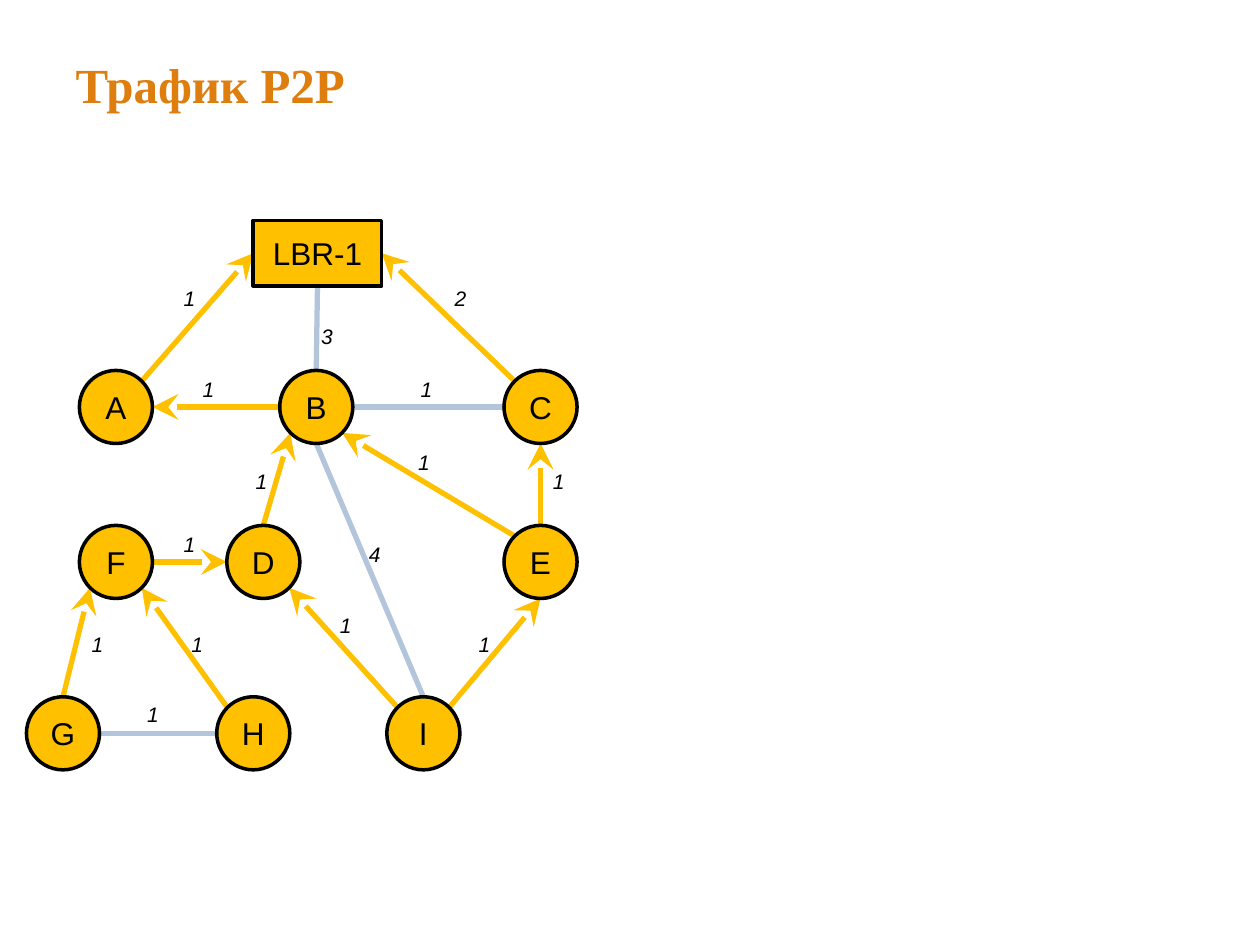
from lxml.etree import SubElement
from pptx import Presentation
from pptx.dml.color import RGBColor
from pptx.enum.shapes import MSO_CONNECTOR, MSO_SHAPE
from pptx.enum.text import MSO_ANCHOR, PP_ALIGN
from pptx.oxml import parse_xml
from pptx.oxml.ns import nsdecls, qn
from pptx.util import Inches, Pt

COLORS = {"title": "DD7E0E", "gold": "FFC000", "link": "B3C5DA", "ink": "000000"}
FORMATS = {
    "title": {"name": "Times New Roman", "size": Pt(28), "bold": True},
    "node": {"name": "Arial", "size": Pt(18)},
    "label": {"name": "Arial", "size": Pt(12), "italic": True},
}
SIZE = 0.58
DIAG = 0.71
SITES = {
    "n": (0, -1), "s": (0, 1), "w": (-1, 0), "e": (1, 0),
    "nw": (-DIAG, -DIAG), "ne": (DIAG, -DIAG),
    "sw": (-DIAG, DIAG), "se": (DIAG, DIAG),
}
NODES = {
    "A": (0.63, 2.94, SIZE, SIZE), "B": (2.22, 2.94, SIZE, SIZE),
    "C": (4, 2.94, SIZE, SIZE), "D": (1.8, 4.17, SIZE, SIZE),
    "E": (4, 4.17, SIZE, SIZE), "F": (0.63, 4.17, SIZE, SIZE),
    "G": (0.21, 5.53, SIZE, SIZE), "H": (1.72, 5.53, SIZE, SIZE),
    "I": (3.07, 5.53, SIZE, SIZE), "LBR-1": (2.01, 1.75, 1.02, 0.52),
}
ARROWS = [
    ("LBR-1", "w", "A", "ne", "1", 1.36, 2.22),
    ("LBR-1", "e", "C", "nw", "2", 3.51, 2.22),
    ("E", "s", "I", "ne", "1", 3.7, 4.96),
    ("C", "s", "E", "n", "1", 4.29, 3.67),
    ("B", "se", "E", "nw", "1", 3.22, 3.52),
    ("A", "e", "B", "w", "1", 1.51, 2.94),
    ("F", "sw", "G", "n", "1", 0.63, 4.96),
    ("F", "se", "H", "nw", "1", 1.42, 4.96),
    ("D", "se", "I", "nw", "1", 2.6, 4.81),
    ("B", "sw", "D", "n", "1", 1.93, 3.67),
    ("D", "w", "F", "e", "1", 1.36, 4.17),
]
LINKS = [
    ("LBR-1", "s", "B", "n", "3", 2.45, 2.52),
    ("B", "e", "C", "w", "1", 3.24, 2.94),
    ("I", "n", "B", "s", "4", 2.83, 4.25),
    ("G", "e", "H", "w", "1", 1.07, 5.52),
]


def tint(key):
    """Return the named colour."""
    return RGBColor.from_string(COLORS[key])


def spot(node, site):
    """Return the point of a site on the edge of a node."""
    left, top, width, height = NODES[node]
    x, y = SITES[site]
    return Inches(left + width * (1 + x) / 2), Inches(top + height * (1 + y) / 2)


class Board:
    """Holds the style and the current slide."""

    def __init__(self, deck):
        """Add a slide with a title to the deck."""
        self.slide = deck.slides.add_slide(deck.slide_layouts[5])
        self.shapes = self.slide.shapes

    def letter(self, shape, text, style, color, align):
        """Put one styled line of text in a shape."""
        frame = shape.text_frame
        frame.word_wrap = style == "title"
        para = frame.paragraphs[0]
        para.alignment = align
        run = para.add_run()
        run.text = text
        for key, value in FORMATS[style].items():
            setattr(run.font, key, value)
        run.font.color.rgb = tint(color)
        return run

    def title(self, text, box):
        """Place the title with its soft text shadow."""
        shape = self.shapes.title
        shape.left, shape.top, shape.width, shape.height = map(Inches, box)
        shape.text_frame.vertical_anchor = MSO_ANCHOR.MIDDLE
        run = self.letter(shape, text, "title", "title", PP_ALIGN.LEFT)
        shadow = parse_xml(
            f'<a:effectLst {nsdecls("a")}><a:outerShdw blurRad="38100" dist="38100" '
            'dir="2700000" algn="tl"><a:srgbClr val="000000"><a:alpha val="43000"/>'
            '</a:srgbClr></a:outerShdw></a:effectLst>')
        props = run._r.get_or_add_rPr()
        props.find(qn("a:solidFill")).addnext(shadow)

    def edge(self, start, near, end, far, color, arrow):
        """Join two nodes, with an arrowhead at the start if asked."""
        line = self.shapes.add_connector(
            MSO_CONNECTOR.STRAIGHT, *spot(start, near), *spot(end, far))
        line.line.color.rgb = tint(color)
        line.line.width = Pt(3)
        props = line._element.spPr
        if arrow:
            SubElement(props.find(qn("a:ln")), qn("a:headEnd"),
                       type="stealth", w="lg", len="lg")
        SubElement(props, qn("a:effectLst"))

    def label(self, text, x, y):
        """Add the weight of an edge."""
        box = self.shapes.add_textbox(Inches(x), Inches(y), Inches(0.3), Inches(0.3))
        self.letter(box, text, "label", "ink", PP_ALIGN.LEFT)

    def node(self, name, box):
        """Draw a node: a circle, or a box for the border router."""
        kind = MSO_SHAPE.OVAL if len(name) == 1 else MSO_SHAPE.RECTANGLE
        shape = self.shapes.add_shape(kind, *map(Inches, box))
        shape.shadow.inherit = False
        shape.fill.solid()
        shape.fill.fore_color.rgb = tint("gold")
        shape.line.color.rgb = tint("ink")
        shape.line.width = Pt(2)
        shape.text_frame.vertical_anchor = MSO_ANCHOR.MIDDLE
        self.letter(shape, name, "node", "ink", PP_ALIGN.CENTER)


def main():
    """Build the slide and save it."""
    deck = Presentation()
    deck.slide_width, deck.slide_height = Inches(10), Inches(7.5)
    board = Board(deck)
    board.title("Трафик P2P", (0.5, 0.18, 9.25, 0.97))
    for edges, color, arrow in ((ARROWS, "gold", True), (LINKS, "link", False)):
        for *ends, text, x, y in edges:
            board.edge(*ends, color, arrow)
            board.label(text, x, y)
    for name, box in NODES.items():
        board.node(name, box)
    deck.save("out.pptx")


if __name__ == "__main__":
    main()
